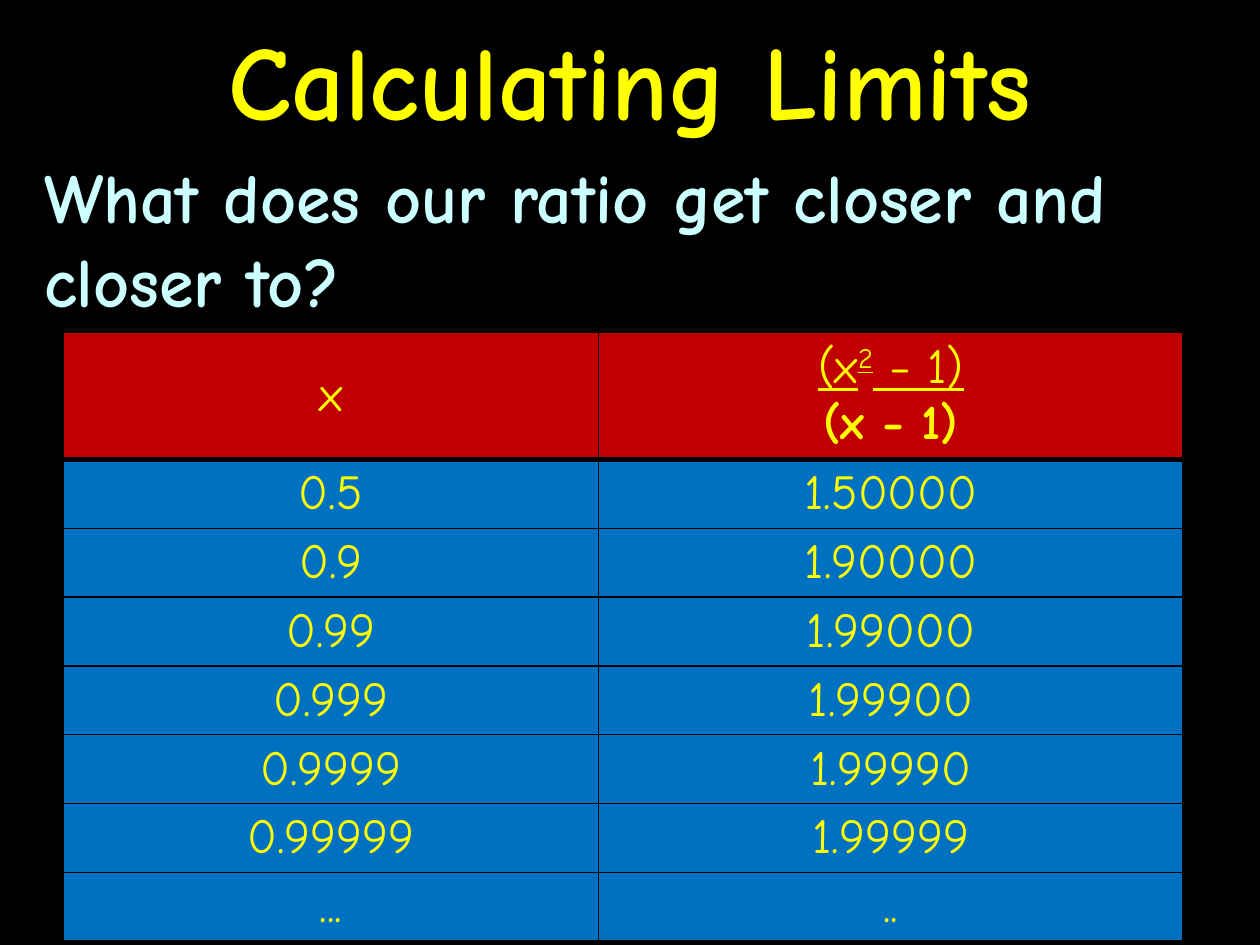
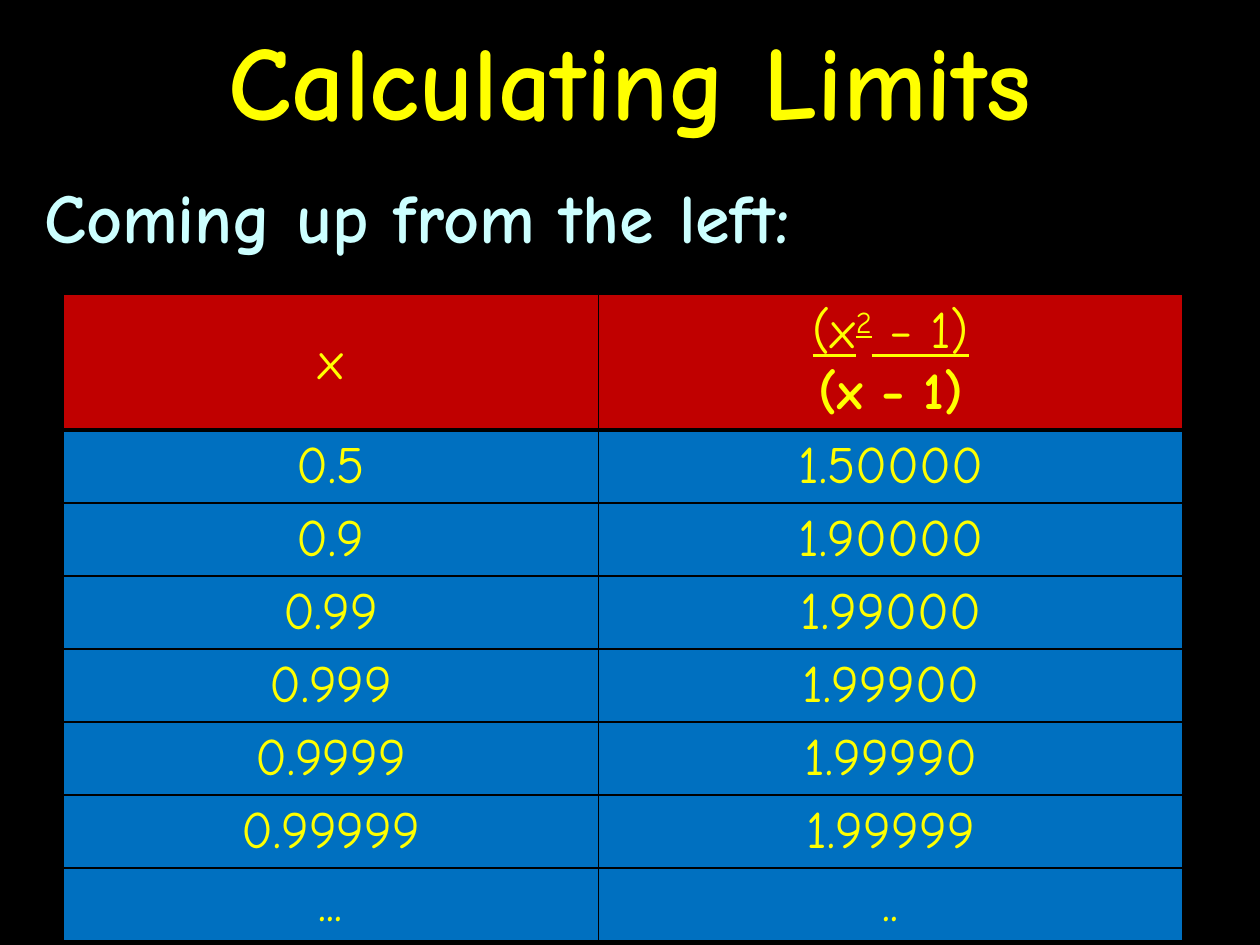
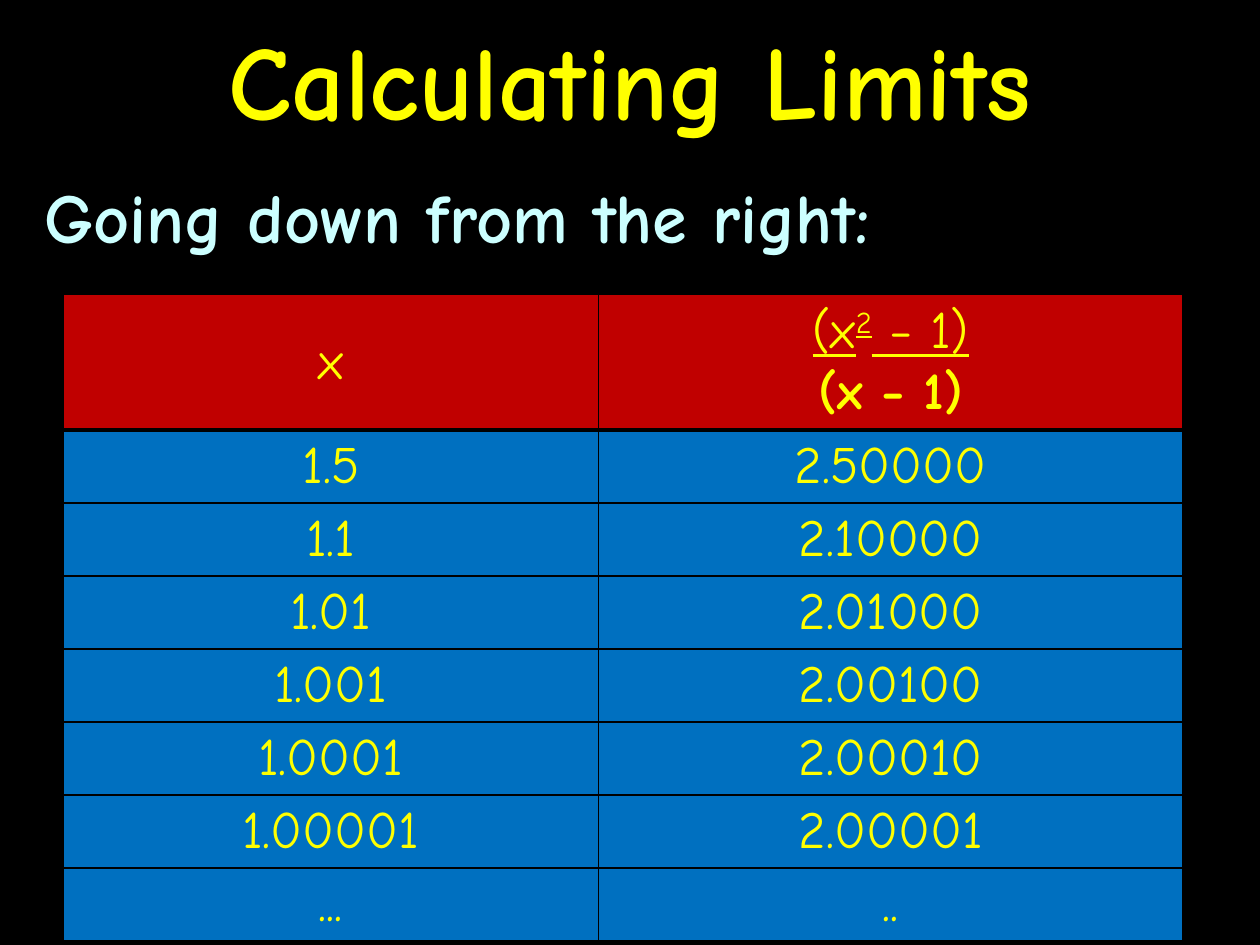
from lxml.etree import SubElement
from pptx import Presentation
from pptx.dml.color import RGBColor
from pptx.enum.text import MSO_ANCHOR, PP_ALIGN
from pptx.oxml.ns import qn
from pptx.util import Cm, Pt

BLACK = RGBColor(0x00, 0x00, 0x00)
YELLOW = RGBColor(0xFF, 0xFF, 0x00)
PALE_CYAN = RGBColor(0xCC, 0xFF, 0xFF)
RED = RGBColor(0xC0, 0x00, 0x00)
BLUE = RGBColor(0x00, 0x70, 0xC0)
FONT = "Comic Neue"
LEFT_STEPS = ["0.5", "0.9", "0.99", "0.999", "0.9999", "0.99999"]
RIGHT_STEPS = ["1.5", "1.1", "1.01", "1.001", "1.0001", "1.00001"]


def add_text(p, text, size, color=YELLOW, bold=False, underline=False,
             baseline=0, align=PP_ALIGN.CENTER):
    """Append a formatted run to a paragraph."""
    p.alignment = align
    r = p.add_run()
    r.text = text
    r.font.name = FONT
    r.font.size = Pt(size)
    r.font.bold = bold
    r.font.underline = underline
    r.font.color.rgb = color
    if baseline:
        r.font._element.set("baseline", str(baseline * 1000))


def add_box(slide, box, anchor):
    """Add a wrapping text box and return its first paragraph."""
    tf = slide.shapes.add_textbox(*map(Cm, box)).text_frame
    tf.word_wrap = True
    tf.vertical_anchor = anchor
    return tf.paragraphs[0]


def add_title(slide, box):
    """Add the title shared by all slides."""
    p = add_box(slide, box, MSO_ANCHOR.MIDDLE)
    add_text(p, "Calculating Limits", 60, bold=True)


def add_prompt(slide, box, text):
    """Add the line that introduces the table."""
    p = add_box(slide, box, MSO_ANCHOR.TOP)
    p.space_before = Pt(8)
    add_text(p, text, 40, PALE_CYAN, bold=True, align=PP_ALIGN.LEFT)


def style_cell(cell, fill, bottom=1):
    """Set the margins, borders and fill of a cell."""
    cell.vertical_anchor = MSO_ANCHOR.MIDDLE
    cell.margin_left = cell.margin_right = Cm(0.1)
    cell.margin_top = cell.margin_bottom = Cm(0.1)
    tc_pr = cell._tc.get_or_add_tcPr()
    for side, width in zip("LRTB", (1, 1, 1, bottom)):
        ln = SubElement(tc_pr, qn(f"a:ln{side}"), w=str(Pt(width)))
        solid = SubElement(ln, qn("a:solidFill"))
        SubElement(solid, qn("a:srgbClr"), val=str(BLACK))
    cell.fill.solid()
    cell.fill.fore_color.rgb = fill


def add_ratio_header(cell, size):
    """Write the ratio as an underlined numerator over its denominator."""
    tf = cell.text_frame
    p = tf.paragraphs[0]
    for text, baseline in (("(x", 0), ("2", 30), (" − 1)", 0)):
        add_text(p, text, size, underline=True, baseline=baseline)
    add_text(tf.add_paragraph(), "(x − 1)", size, bold=True)


def add_limit_table(slide, box, steps, size, header_height):
    """Add the table of x against the ratio, which equals x + 1."""
    left, top, width, height = box
    rows = [(x, f"{float(x) + 1:.5f}") for x in steps] + [("...", "..")]
    table = slide.shapes.add_table(len(rows) + 1, 2, *map(Cm, box)).table
    table.first_row = table.horz_banding = False
    x_width = 10.8
    table.columns[0].width = Cm(x_width)
    table.columns[1].width = Cm(width - x_width)
    for row in table.rows:
        row.height = Cm((height - header_height) / len(rows))
    table.rows[0].height = Cm(header_height)

    for col in range(2):
        style_cell(table.cell(0, col), RED, bottom=3)
    add_text(table.cell(0, 0).text_frame.paragraphs[0], "x", size)
    add_ratio_header(table.cell(0, 1), size)
    for i, values in enumerate(rows, 1):
        for j, value in enumerate(values):
            cell = table.cell(i, j)
            style_cell(cell, BLUE)
            add_text(cell.text_frame.paragraphs[0], value, size)


def add_limit_slide(prs, prompt, steps, prompt_top, table_top, size, header_height):
    """Add a slide with a title, a prompt and a table of values."""
    slide = prs.slides.add_slide(prs.slide_layouts[6])
    slide.background.fill.solid()
    slide.background.fill.fore_color.rgb = BLACK
    add_title(slide, (0, 0, 25.4, 3.18))
    add_prompt(slide, (0.64, prompt_top, 24.13, 15.67), prompt)
    box = (1.27, table_top, 22.58, 18.55 - table_top)
    add_limit_table(slide, box, steps, size, header_height)


def main():
    """Build the three slides on calculating limits."""
    prs = Presentation()
    prs.slide_width, prs.slide_height = Cm(25.4), Cm(19.05)
    add_limit_slide(prs, "What does our ratio get closer and closer to?",
                    LEFT_STEPS, 2.97, 6.69, 28, 2.45)
    for prompt, steps in (("Coming up from the left:", LEFT_STEPS),
                          ("Going down from the right:", RIGHT_STEPS)):
        add_limit_slide(prs, prompt, steps, 3.38, 5.93, 30, 2.63)
    prs.save("out.pptx")


if __name__ == "__main__":
    main()
